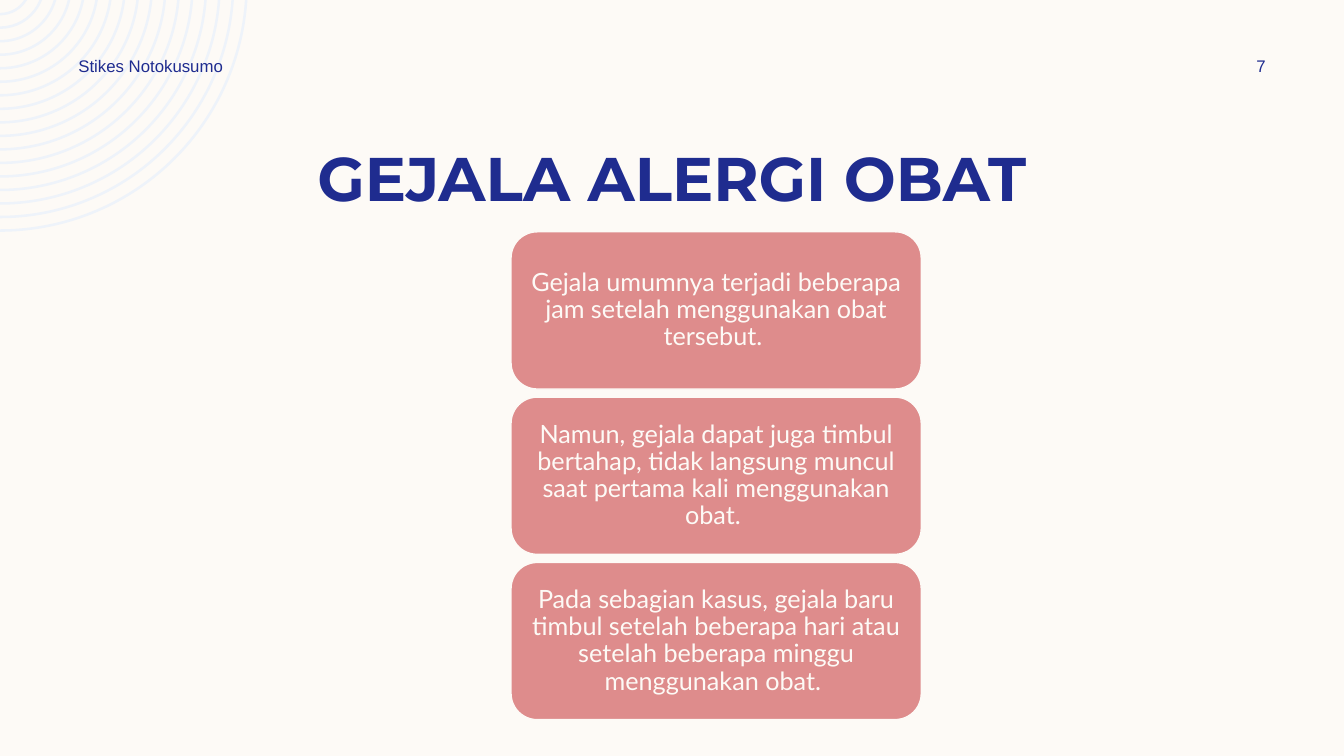
import math
from dataclasses import dataclass

from lxml import etree
from pptx import Presentation
from pptx import util as u
from pptx.dml.color import RGBColor
from pptx.enum import shapes, text
from pptx.oxml import ns

COLUMNS, ROWS = 160, 90
CELL = u.Inches(1 / 12)
CREAM, NAVY, ROSE, PALE_BLUE = "FDFAF6", "1F2C8F", "DE8C8C", "EEF3FA"

RING_COUNT, RING_STEP, RING_WIDTH = 17, 1.61, 0.3
RING_RADIUS, RING_CENTRE_ROW = 29.52, -1.92

SYMPTOM_TOP, SYMPTOM_PITCH = 27.6, 19.68
SYMPTOMS = [
    "Gejala umumnya terjadi beberapa jam setelah menggunakan obat tersebut. ",
    "Namun, gejala dapat juga timbul bertahap, tidak langsung muncul "
    "saat pertama kali menggunakan obat. ",
    "Pada sebagian kasus, gejala baru timbul setelah beberapa hari atau "
    "setelah beberapa minggu menggunakan obat. ",
]


@dataclass(frozen=True)
class Area:
    column: float
    row: float
    columns: float
    rows: float

    def box(self) -> list[int]:
        return [cells(n) for n in (self.column, self.row, self.columns, self.rows)]


@dataclass(frozen=True)
class Label:
    words: str
    area: Area
    align: text.PP_ALIGN
    font: dict


@dataclass(frozen=True)
class Arc:
    """Part of a circle from the slide's top edge to its left edge."""

    radius: float

    def start_angle(self) -> float:
        return math.degrees(math.asin(-RING_CENTRE_ROW / self.radius))

    def top_end(self) -> tuple[int, int]:
        return cells(math.sqrt(self.radius**2 - RING_CENTRE_ROW**2)), 0

    def left_end(self) -> tuple[int, int]:
        return 0, cells(RING_CENTRE_ROW + self.radius)


def cells(count: float) -> int:
    return round(count * CELL)


def colour(value: str) -> RGBColor:
    return RGBColor.from_string(value)


def paint(fill, value: str) -> None:
    fill.solid()
    fill.fore_color.rgb = colour(value)


def write(shape, words: str, align: text.PP_ALIGN, font: dict, ink: str):
    frame = shape.text_frame
    frame.word_wrap = True
    frame.vertical_anchor = text.MSO_ANCHOR.MIDDLE
    paragraph = frame.paragraphs[0]
    paragraph.alignment = align
    run = paragraph.add_run()
    run.text = words
    for name, value in font.items():
        setattr(run.font, name, value)
    run.font.color.rgb = colour(ink)
    return paragraph


def bend(line, radius: float, start: float, sweep: float) -> None:
    """Turn a straight segment of a freeform into a circular arc."""
    curve = etree.Element(ns.qn("a:arcTo"))
    values = {
        "wR": cells(radius),
        "hR": cells(radius),
        "stAng": round(start * 60000),
        "swAng": round(sweep * 60000),
    }
    for name, value in values.items():
        curve.set(name, str(value))
    line.getparent().replace(line, curve)


def draw_rings(slide) -> None:
    radii = [RING_RADIUS - ring * RING_STEP for ring in range(RING_COUNT)]
    rings = [(Arc(radius), Arc(radius - RING_WIDTH)) for radius in radii]
    builder = slide.shapes.build_freeform(*rings[0][0].top_end())
    for outer, inner in rings:
        if outer is not rings[0][0]:
            builder.move_to(*outer.top_end())
        corners = [outer.left_end(), inner.left_end(), inner.top_end()]
        builder.add_line_segments(corners, close=True)
    shape = builder.convert_to_shape()

    lines = list(shape.element.iter(ns.qn("a:lnTo")))
    for (outer, inner), outer_line, inner_line in zip(rings, lines[::3], lines[2::3]):
        bend(outer_line, outer.radius, outer.start_angle(), 90 - outer.start_angle())
        bend(inner_line, inner.radius, 90, inner.start_angle() - 90)
    shape.shadow.inherit = False
    paint(shape.fill, PALE_BLUE)
    shape.line.fill.background()


def draw_label(slide, label: Label) -> None:
    shape = slide.shapes.add_textbox(*label.area.box())
    write(shape, label.words, label.align, label.font, NAVY)


def draw_symptom(slide, index: int, words: str) -> None:
    area = Area(60.84, SYMPTOM_TOP + index * SYMPTOM_PITCH, 48.84, 18.72)
    shape = slide.shapes.add_shape(shapes.MSO_SHAPE.ROUNDED_RECTANGLE, *area.box())
    shape.shadow.inherit = False
    paint(shape.fill, ROSE)
    paint(shape.line.fill, CREAM)
    shape.line.width = u.Pt(1)
    margins = {"margin_left": 0.07, "margin_right": 0.07, "margin_top": 0.04, "margin_bottom": 0.04}
    for name, inches in margins.items():
        setattr(shape.text_frame, name, u.Inches(inches))
    font = {"name": "Lato", "size": u.Pt(18)}
    paragraph = write(shape, words, text.PP_ALIGN.CENTER, font, CREAM)
    paragraph.line_spacing = 0.9


def main() -> None:
    presentation = Presentation()
    presentation.slide_width = cells(COLUMNS)
    presentation.slide_height = cells(ROWS)
    slide = presentation.slides.add_slide(presentation.slide_layouts[6])
    paint(slide.background.fill, CREAM)
    draw_rings(slide)

    title_font = {"name": "Montserrat", "size": u.Pt(44), "bold": True}
    small_font = {"name": "Arial", "size": u.Pt(12)}
    left, centre = text.PP_ALIGN.LEFT, text.PP_ALIGN.CENTER
    for label in (
        Label("GEJALA ALERGI OBAT", Area(10, 16, 140, 10.08), centre, title_font),
        Label("Stikes Notokusumo", Area(8.16, 6, 42, 3.6), left, small_font),
        Label("7", Area(143.64, 6, 12.96, 3.6), centre, small_font),
    ):
        draw_label(slide, label)
    for index, words in enumerate(SYMPTOMS):
        draw_symptom(slide, index, words)
    presentation.save("out.pptx")


if __name__ == "__main__":
    main()
